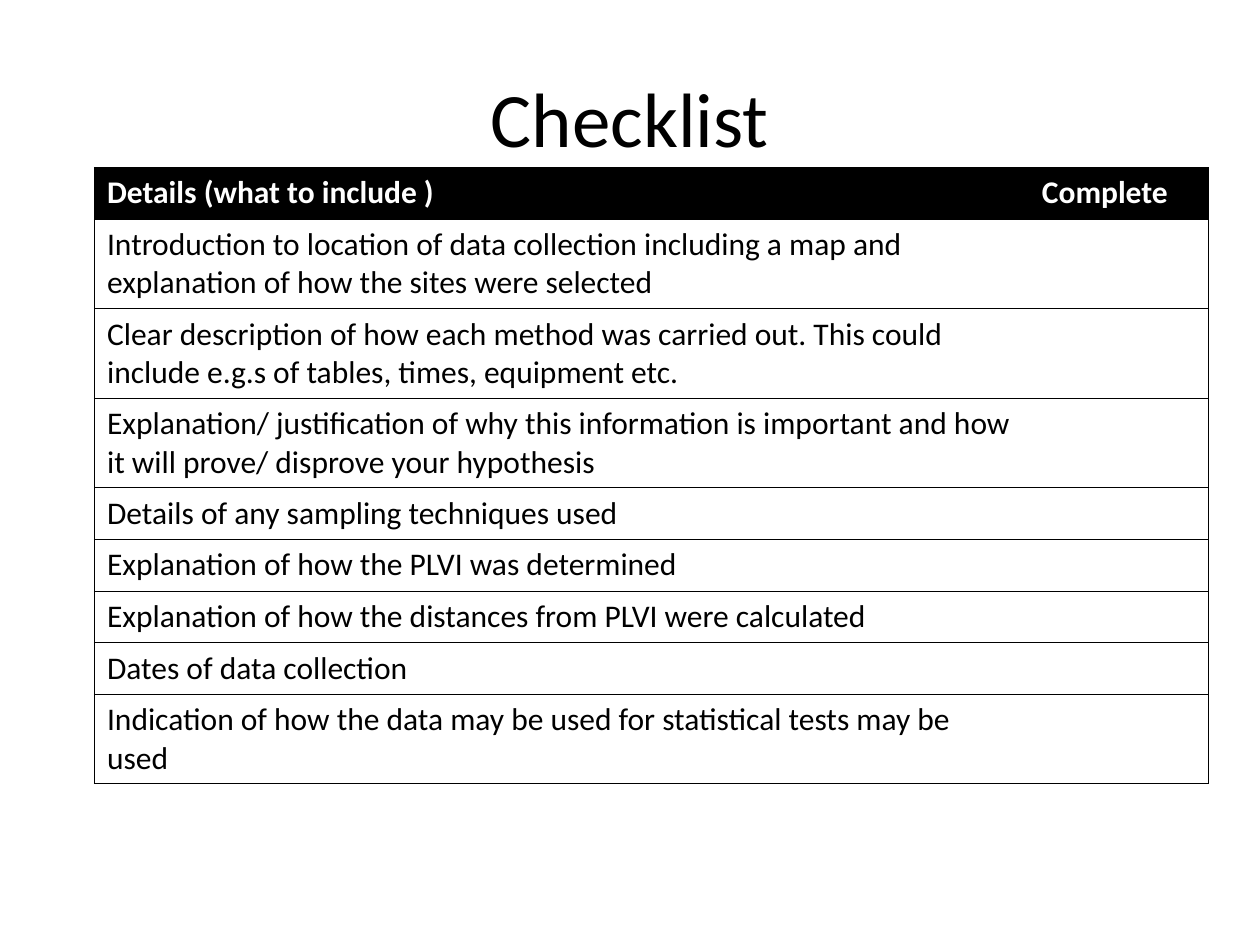
import pptx
import pptx.util
import pptx.dml.color
import pptx.enum.text
import pptx.oxml
import pptx.oxml.ns
from pptx.util import Inches

COLORS = {"ink": "000000", "paper": "FFFFFF"}
TITLE = {"size": pptx.util.Pt(44), "name": "Calibri", "bold": False}
HEADER = {"size": pptx.util.Pt(18), "name": "Calibri", "bold": True}
BODY = {**HEADER, "bold": False}

ITEMS = [
    "Introduction to location of data collection including a map and explanation of how the sites were selected",
    "Clear description of how each method was carried out. This could include e.g.s of tables, times, equipment etc.",
    "Explanation/ justification of why this information is important and how it will prove/ disprove your hypothesis",
    "Details of any sampling techniques used",
    "Explanation of how the PLVI was determined",
    "Explanation of how the distances from PLVI were calculated",
    "Dates of data collection",
    "Indication of how the data may be used for statistical tests may be used",
]
ROWS = [("Details (what to include )", "Complete")] + [(item, "") for item in ITEMS]


def format_font(font, values, color):
    for name, value in values.items():
        setattr(font, name, value)
    font.color.rgb = pptx.dml.color.RGBColor.from_string(COLORS[color])


def set_borders(cell, visible):
    """Rule the listed sides of a cell and clear the others."""
    tcPr = cell._tc.get_or_add_tcPr()
    for i, side in enumerate("LRTB"):
        fill = (f'<a:solidFill><a:srgbClr val="{COLORS["ink"]}"/></a:solidFill>'
                if side in visible else "<a:noFill/>")
        tcPr.insert(i, pptx.oxml.parse_xml(
            f'<a:ln{side} {pptx.oxml.ns.nsdecls("a")} w="{pptx.util.Pt(0.75)}">'
            f'{fill}</a:ln{side}>'))


prs = pptx.Presentation()
prs.slide_width, prs.slide_height = Inches(10), Inches(7.5)
s = prs.slides.add_slide(prs.slide_layouts[5])

# Title
sp = s.shapes.title
sp.left, sp.top, sp.width, sp.height = Inches(0.5), Inches(0.3), Inches(9), Inches(1.25)
tf = sp.text_frame
tf.text = "Checklist"
tf.vertical_anchor = pptx.enum.text.MSO_ANCHOR.MIDDLE
p = tf.paragraphs[0]
p.alignment = pptx.enum.text.PP_ALIGN.CENTER
format_font(p.runs[0].font, TITLE, "ink")

# Checklist table: rows with two lines of text grow when drawn
row_height = Inches(0.41)
table = s.shapes.add_table(len(ROWS), 2, Inches(0.75), Inches(1.33),
                           Inches(8.84), row_height * len(ROWS)).table
table.horz_banding = False
for column, width in zip(table.columns, (7.42, 1.42)):
    column.width = Inches(width)

for i, texts in enumerate(ROWS):
    table.rows[i].height = row_height
    values, ink, fill = (BODY, "ink", "paper") if i else (HEADER, "paper", "ink")
    for j, text in enumerate(texts):
        cell = table.cell(i, j)
        cell.fill.solid()
        cell.fill.fore_color.rgb = pptx.dml.color.RGBColor.from_string(COLORS[fill])
        set_borders(cell, ("LTB", "RTB")[j])
        if text:
            r = cell.text_frame.paragraphs[0].add_run()
            r.text = text
            format_font(r.font, values, ink)

prs.save("out.pptx")
